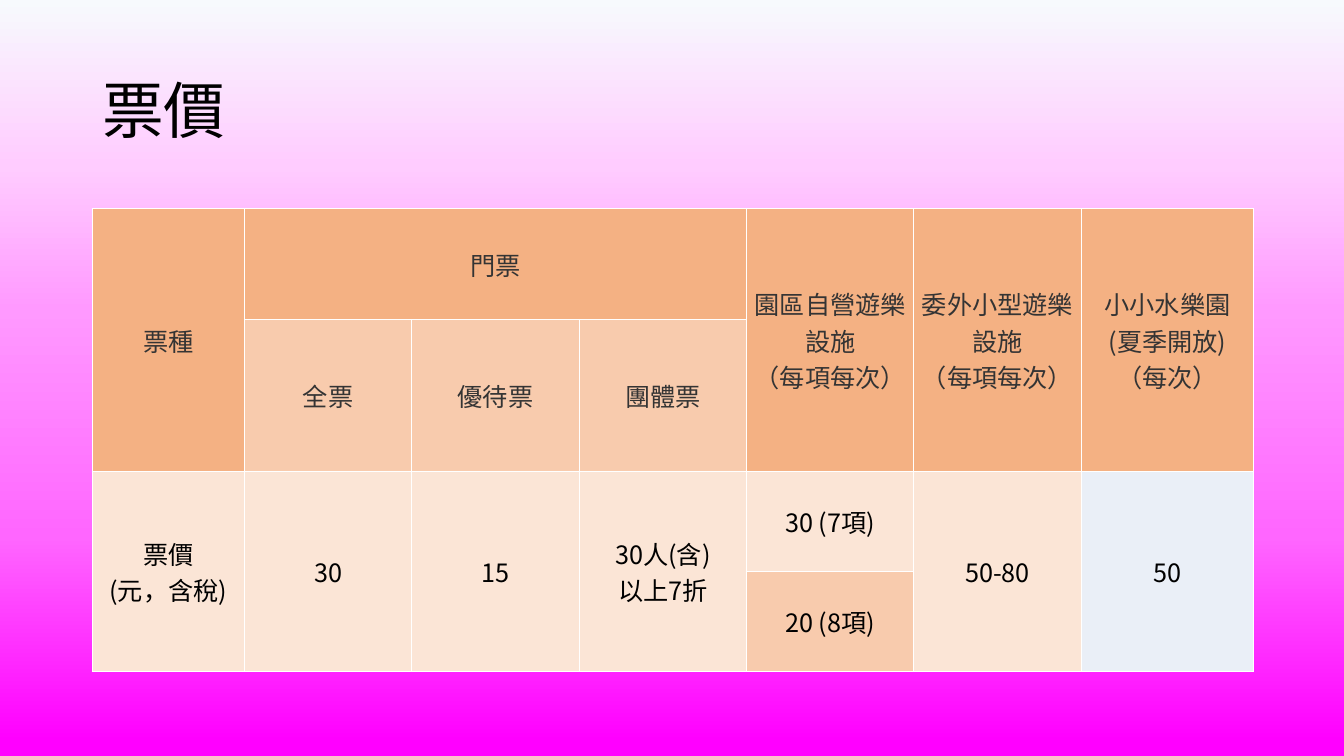
from dataclasses import dataclass

from lxml.etree import SubElement
from pptx import Presentation
from pptx.dml.color import RGBColor
from pptx.enum.text import MSO_ANCHOR as Anchor, PP_ALIGN as Align
from pptx.oxml import parse_xml
from pptx.oxml.ns import nsdecls, qn
from pptx.util import Inches, Pt

SLIDE_WIDTH, SLIDE_HEIGHT = 13.33, 7.5
CONTENT_WIDTH = 11.5
MARGIN = (SLIDE_WIDTH - CONTENT_WIDTH) / 2
TITLE_TOP, TITLE_HEIGHT = 0.4, 1.45
TABLE_TOP = 2.07
COLUMN_WIDTHS = [1.51] + [1.66] * 5 + [1.71]
ROW_HEIGHTS = [1.1, 1.51, 0.99, 0.99]
CELL_INSET = 0.03

FONT = "Noto Sans CJK JP"
BLACK = RGBColor(0x00, 0x00, 0x00)
CHARCOAL = RGBColor(0x34, 0x34, 0x34)
WHITE = RGBColor(0xFF, 0xFF, 0xFF)
ORANGE = RGBColor(0xF4, 0xB1, 0x83)
PEACH = RGBColor(0xF8, 0xCB, 0xAD)
CREAM = RGBColor(0xFB, 0xE5, 0xD6)
PALE_BLUE = RGBColor(0xEA, 0xEF, 0xF7)
BACKGROUND_STOPS = [
    (0, RGBColor(0xF7, 0xFA, 0xFD)),
    (22, RGBColor(0xFF, 0xCC, 0xFF)),
    (41, RGBColor(0xFF, 0x99, 0xFF)),
    (71, RGBColor(0xFF, 0x66, 0xFF)),
    (98, RGBColor(0xFF, 0x00, 0xFF)),
]


@dataclass(frozen=True)
class Block:
    """A table cell that may span several rows and columns."""
    row: int
    column: int
    text: str
    fill: RGBColor
    rows: int = 1
    columns: int = 1
    color: RGBColor = BLACK


BLOCKS = [
    Block(0, 0, "票種", ORANGE, rows=2, color=CHARCOAL),
    Block(0, 1, "門票", ORANGE, columns=3, color=CHARCOAL),
    Block(0, 4, "園區自營遊樂設施\n（每項每次）", ORANGE, rows=2, color=CHARCOAL),
    Block(0, 5, "委外小型遊樂設施\n（每項每次）", ORANGE, rows=2, color=CHARCOAL),
    Block(0, 6, "小小水樂園\n(夏季開放)\n（每次）", ORANGE, rows=2, color=CHARCOAL),
    Block(1, 1, "全票", PEACH, color=CHARCOAL),
    Block(1, 2, "優待票", PEACH, color=CHARCOAL),
    Block(1, 3, "團體票", PEACH, color=CHARCOAL),
    Block(2, 0, "票價\n(元，含稅)", CREAM, rows=2),
    Block(2, 1, "30", CREAM, rows=2),
    Block(2, 2, "15", CREAM, rows=2),
    Block(2, 3, "30人(含)\n以上7折", CREAM, rows=2),
    Block(2, 4, "30 (7項)", CREAM),
    Block(3, 4, "20 (8項)", PEACH),
    Block(2, 5, "50-80", CREAM, rows=2),
    Block(2, 6, "50", PALE_BLUE, rows=2),
]


def write_text(text_frame, text: str, *, size: float, color: RGBColor,
               align: Align, line_spacing: float = 1.0) -> None:
    paragraph = text_frame.paragraphs[0]
    paragraph.alignment = align
    paragraph.line_spacing = line_spacing
    for index, line in enumerate(text.split("\n")):
        if index:
            paragraph.add_line_break()
        run = paragraph.add_run()
        run.text = line
        run.font.size = Pt(size)
        run.font.name = FONT
        run.font.color.rgb = color
        SubElement(run.font._element, qn("a:ea")).set("typeface", FONT)


def paint_background(slide) -> None:
    fill = slide.background.fill
    fill.gradient()
    fill.gradient_angle = 270
    stops = next(slide._element.iter(qn("a:gsLst")))
    for stop in list(stops):
        stops.remove(stop)
    for percent, color in BACKGROUND_STOPS:
        stop = SubElement(stops, qn("a:gs"), pos=str(percent * 1000))
        SubElement(stop, qn("a:srgbClr"), val=str(color))


def add_title(slide, text: str) -> None:
    title = slide.shapes.title
    title.left, title.top = Inches(MARGIN), Inches(TITLE_TOP)
    title.width, title.height = Inches(CONTENT_WIDTH), Inches(TITLE_HEIGHT)
    title.text_frame.vertical_anchor = Anchor.MIDDLE
    write_text(title.text_frame, text, size=44, color=BLACK,
               align=Align.LEFT, line_spacing=0.9)


def style_cell(cell, fill: RGBColor) -> None:
    """Give the cell its fill and a thin white border on every side."""
    cell.fill.solid()
    cell.fill.fore_color.rgb = fill
    properties = cell._tc.get_or_add_tcPr()
    for index, side in enumerate("LRTB"):
        properties.insert(index, parse_xml(
            f'<a:ln{side} {nsdecls("a")} w="{Pt(1)}"><a:solidFill>'
            f'<a:srgbClr val="{WHITE}"/></a:solidFill></a:ln{side}>'))


def fill_block(table, block: Block) -> None:
    last_row = block.row + block.rows - 1
    last_column = block.column + block.columns - 1
    for row in range(block.row, last_row + 1):
        for column in range(block.column, last_column + 1):
            style_cell(table.cell(row, column), block.fill)
    cell = table.cell(block.row, block.column)
    if block.rows * block.columns > 1:
        cell.merge(table.cell(last_row, last_column))
    cell.vertical_anchor = Anchor.MIDDLE
    cell.margin_left = cell.margin_right = Inches(CELL_INSET)
    cell.margin_top = cell.margin_bottom = Inches(CELL_INSET)
    write_text(cell.text_frame, block.text, size=18, color=block.color,
               align=Align.CENTER)


def add_price_table(slide) -> None:
    table = slide.shapes.add_table(
        len(ROW_HEIGHTS), len(COLUMN_WIDTHS), Inches(MARGIN), Inches(TABLE_TOP),
        Inches(CONTENT_WIDTH), Inches(sum(ROW_HEIGHTS))).table
    table.first_row = table.horz_banding = False
    for column, width in zip(table.columns, COLUMN_WIDTHS):
        column.width = Inches(width)
    for row, height in zip(table.rows, ROW_HEIGHTS):
        row.height = Inches(height)
    for block in BLOCKS:
        fill_block(table, block)


def main() -> None:
    presentation = Presentation()
    presentation.slide_width = Inches(SLIDE_WIDTH)
    presentation.slide_height = Inches(SLIDE_HEIGHT)
    slide = presentation.slides.add_slide(
        presentation.slide_layouts.get_by_name("Title Only"))
    paint_background(slide)
    add_title(slide, "票價")
    add_price_table(slide)
    presentation.save("out.pptx")


if __name__ == "__main__":
    main()
